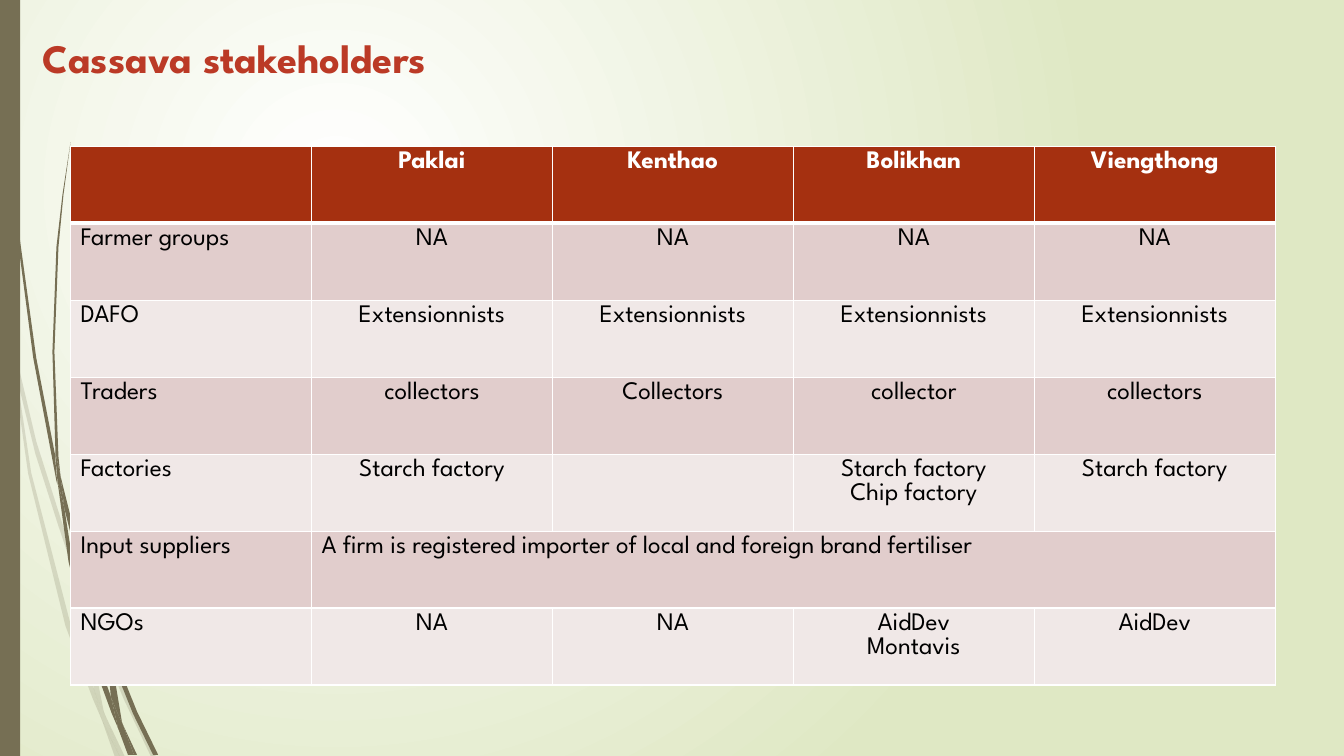
from lxml import etree
from pptx import Presentation
from pptx import util as u
from pptx.dml import color
from pptx.enum import shapes, text
from pptx.oxml import ns

Pt = u.Pt
MID = text.PP_ALIGN.CENTER
LEFT = text.PP_ALIGN.LEFT

PALE = [
    [(11, 350), (9, 322), (0, 282), (0, 299), (10, 344)],
    [(58, 522), (84, 599), (85, 586), (62, 520), (36, 438), (14, 345),
     (17, 376), (35, 450)],
    [(92, 607), (88, 596), (88, 610), (123, 694), (150, 751), (155, 751),
     (127, 692)],
    [(119, 751), (124, 751), (105, 711)],
    [(93, 683), (70, 619), (31, 469), (17, 376), (11, 350), (28, 470),
     (65, 621), (92, 693), (101, 714), (99, 707)],
    [(84, 599), (87, 646), (93, 683), (96, 692), (105, 711), (103, 706),
     (91, 646), (88, 610), (88, 608)],
    [(88, 584), (95, 520), (110, 462), (160, 349), (229, 245), (268, 198),
     (290, 175), (312, 154), (312, 153), (289, 175), (268, 197), (228, 244),
     (158, 348), (107, 461), (91, 520), (85, 584), (85, 586), (88, 596)],
    [(101, 714), (114, 751), (119, 751)],
    [(88, 608), (88, 610), (88, 596), (85, 586), (84, 599)],
    [(96, 692), (93, 683), (99, 707), (101, 714), (119, 751), (105, 711)],
]
DARK = [
    [(7, 110), (17, 233), (33, 355), (56, 477), (57, 481), (55, 457),
     (55, 453), (36, 355), (19, 232), (8, 109), (5, 48), (4, 0), (3, 0),
     (4, 48)],
    [(88, 592), (106, 645), (106, 633), (106, 631), (93, 590), (75, 532),
     (60, 472), (64, 505), (75, 549)],
    [(113, 649), (110, 641), (111, 656), (132, 708), (152, 749), (157, 749),
     (136, 706)],
    [(110, 691), (98, 657), (72, 556), (64, 505), (57, 477), (68, 557),
     (93, 659), (111, 708), (117, 722), (116, 717)],
    [(60, 472), (58, 453), (54, 349), (58, 245), (63, 193), (70, 141),
     (62, 193), (56, 245), (52, 349), (55, 449)],
    [(133, 749), (136, 749), (122, 719)],
    [(57, 477), (64, 505), (60, 472), (55, 449), (55, 453)],
    [(111, 633), (115, 592), (125, 552), (158, 476), (205, 406), (231, 374),
     (245, 359), (261, 344), (260, 344), (245, 358), (231, 373), (204, 405),
     (156, 474), (122, 551), (111, 591), (106, 631), (110, 641)],
    [(117, 722), (127, 749), (131, 749)],
    [(106, 645), (110, 691), (116, 706), (122, 719), (121, 716), (111, 656),
     (109, 651)],
    [(106, 645), (109, 651), (111, 656), (110, 641), (106, 631), (106, 633)],
    [(116, 706), (110, 691), (116, 717), (117, 722), (130, 749), (133, 749),
     (122, 719)],
]
ROWS = [
    ["", "Paklai", "Kenthao", "Bolikhan", "Viengthong"],
    ["Farmer groups"] + ["NA"] * 4,
    ["DAFO"] + ["Extensionnists"] * 4,
    ["Traders", "collectors", "Collectors", "collector", "collectors"],
    ["Factories", "Starch factory", "", "Starch factory\nChip factory",
     "Starch factory"],
    ["Input suppliers",
     "A firm is registered importer of local and foreign brand fertiliser"],
    ["NGOs", "NA", "NA", "AidDev\nMontavis", "AidDev"],
]


def tint(code):
    return color.RGBColor.from_string(code)


def write(frame, words, size=18, ink="000000", bold=False, align=LEFT,
          font="League Spartan"):
    for i, line in enumerate(words.split("\n")):
        para = frame.paragraphs[0] if i == 0 else frame.add_paragraph()
        para.alignment = align
        para.font.size = Pt(size)
        if line:
            run = para.add_run()
            run.text = line
            run.font.name = font
            run.font.size = Pt(size)
            run.font.bold = bold
            run.font.color.rgb = tint(ink)


class Page:
    olive = "766F54"
    white = "FFFFFF"
    rust = "A53010"
    bands = ["F0E8E7", "E1CDCC"]

    def __init__(self, deck):
        self.slide = deck.slides.add_slide(deck.slide_layouts[6])

    def glow(self, inner, outer):
        fill = self.slide.background.fill
        fill.gradient()
        for stop, code in zip(fill.gradient_stops, (inner, outer)):
            stop.color.rgb = tint(code)
        grad = self.slide.element.find(".//" + ns.qn("a:gradFill"))
        grad.remove(grad.find(ns.qn("a:lin")))
        ring = etree.SubElement(grad, ns.qn("a:path"), path="circle")
        etree.SubElement(ring, ns.qn("a:fillToRect"), l="50000", t="50000",
                         r="100000", b="100000")

    def paint(self, shape, alpha=100):
        shape.shadow.inherit = False
        shape.line.fill.background()
        shape.fill.solid()
        shape.fill.fore_color.rgb = tint(self.olive)
        if alpha < 100:
            clr = shape.fill._xPr.find(".//" + ns.qn("a:srgbClr"))
            etree.SubElement(clr, ns.qn("a:alpha"), val=str(alpha * 1000))

    def grass(self, blades, alpha=100):
        group = self.slide.shapes.add_group_shape()
        for blade in blades:
            pen = group.shapes.build_freeform(*blade[0], scale=Pt(0.72))
            pen.add_line_segments(blade[1:], close=True)
            self.paint(pen.convert_to_shape(), alpha)

    def bar(self, *box):
        kind = shapes.MSO_SHAPE.RECTANGLE
        self.paint(self.slide.shapes.add_shape(kind, *map(Pt, box)))

    def title(self, words, *box):
        frame = self.slide.shapes.add_textbox(*map(Pt, box)).text_frame
        frame.word_wrap = True
        frame.vertical_anchor = text.MSO_ANCHOR.BOTTOM
        frame.margin_bottom = 0
        write(frame, words, size=28.8, ink="BB3A26", bold=True)

    def edge(self, cell, row):
        props = cell._tc.get_or_add_tcPr()
        thick = {"T": row == 1, "B": row == 0}
        for side in "LRTB":
            width = Pt(3 if thick.get(side) else 1)
            line = etree.SubElement(props, ns.qn("a:ln" + side), w=str(width))
            fill = etree.SubElement(line, ns.qn("a:solidFill"))
            etree.SubElement(fill, ns.qn("a:srgbClr"), val=self.white)

    def table(self, rows, left, top, wide, high):
        count = len(rows[0])
        grid = self.slide.shapes.add_table(
            len(rows), count, Pt(left), Pt(top), Pt(wide * count),
            Pt(high * len(rows))).table
        grid.horz_banding = False
        for r, row in enumerate(rows):
            head = r == 0
            for c in range(count):
                cell = grid.cell(r, c)
                self.edge(cell, r)
                cell.fill.solid()
                cell.fill.fore_color.rgb = tint(
                    self.rust if head else self.bands[r % 2])
            if len(row) < count:
                grid.cell(r, len(row) - 1).merge(grid.cell(r, count - 1))
            for c, words in enumerate(row):
                write(grid.cell(r, c).text_frame, words, bold=head,
                      ink=self.white if head else "000000",
                      align=MID if c and len(row) == count else LEFT)


def main():
    deck = Presentation()
    deck.slide_width, deck.slide_height = Pt(960), Pt(540)
    page = Page(deck)
    page.glow("FFFFFF", "DFE8C4")
    page.grass(PALE, alpha=20)
    page.grass(DARK)
    page.bar(0, 0, 14.4, 540)
    page.title("Cassava stakeholders", 23, 21.6, 913.7, 36.7)
    page.table(ROWS, 50.4, 104.4, 172.1, 55)
    deck.save("out.pptx")


if __name__ == "__main__":
    main()
